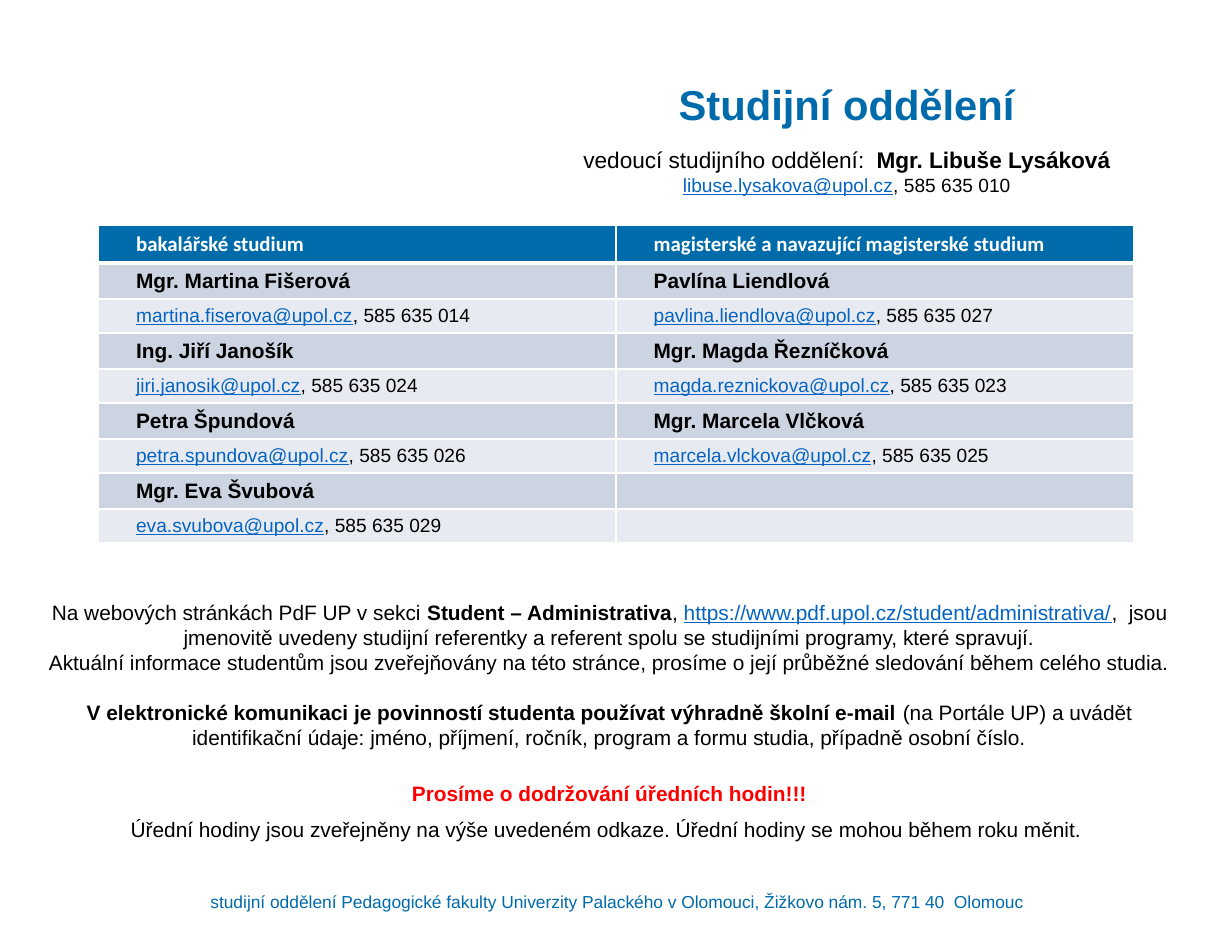
"""Build the study office contact slide."""
from dataclasses import dataclass

import pptx
import pptx.util
import pptx.dml.color
import pptx.enum.text
import pptx.oxml
import pptx.oxml.ns

Pt = pptx.util.Pt
ALIGN = pptx.enum.text.PP_ALIGN
ANCHOR = pptx.enum.text.MSO_ANCHOR
HUES = {
    "blue": "006BAB", "link": "0563C1", "black": "000000", "red": "FF0000",
    "white": "FFFFFF", "dark": "CCD4E2", "light": "E7EBF1",
}


@dataclass
class Run:
    text: str
    size: float = 12
    hue: str = "black"
    bold: bool = False
    line: bool = False
    font: str = "Arial"


@dataclass
class Para:
    runs: list[Run]
    before: float = 0


@dataclass
class Box:
    left: float
    top: float
    width: float
    height: float
    paras: list[Para]
    inset: tuple[float, float] = (0, 0)
    anchor: ANCHOR = ANCHOR.TOP


@dataclass
class Person:
    name: str
    mail: str
    phone: str


def color(hue: str) -> pptx.dml.color.RGBColor:
    return pptx.dml.color.RGBColor.from_string(HUES[hue])


def link(text: str, size: float = 11) -> Run:
    return Run(text, size, "link", line=True)


def contact(mail: str, phone: str) -> list[Run]:
    return [link(mail), Run(f", {phone}", 11)]


def write(para, runs: list[Run]) -> None:
    for item in runs:
        run = para.add_run()
        run.text = item.text
        font = run.font
        font.name, font.size = item.font, Pt(item.size)
        font.bold, font.underline = item.bold, item.line
        font.color.rgb = color(item.hue)


def draw_box(slide, box: Box) -> None:
    shape = slide.shapes.add_textbox(*map(Pt, (box.left, box.top, box.width, box.height)))
    frame = shape.text_frame
    frame.word_wrap = True
    frame.vertical_anchor = box.anchor
    frame.margin_left = frame.margin_right = Pt(box.inset[0])
    frame.margin_top = frame.margin_bottom = Pt(box.inset[1])
    for i, item in enumerate(box.paras):
        para = frame.add_paragraph() if i else frame.paragraphs[0]
        para.alignment = ALIGN.CENTER
        para.space_before = Pt(item.before)
        write(para, item.runs)


def edge(cell, widths: dict[str, float]) -> None:
    props = cell._tc.get_or_add_tcPr()
    for i, (side, width) in enumerate(widths.items()):
        props.insert(i, pptx.oxml.parse_xml(
            f'<a:ln{side} {pptx.oxml.ns.nsdecls("a")} w="{Pt(width)}"><a:solidFill>'
            f'<a:srgbClr val="{HUES["white"]}"/></a:solidFill></a:ln{side}>'))


def draw_cell(cell, runs: list[Run], fill: str, top: float, low: float) -> None:
    cell.fill.solid()
    cell.fill.fore_color.rgb = color(fill)
    cell.margin_bottom = Pt(2.6)
    edge(cell, {"L": 1, "R": 1, "T": top, "B": low})
    para = cell.text_frame.paragraphs[0]
    para._p.get_or_add_pPr().set("marL", str(Pt(14.4)))
    para.font.size = Pt(11)
    write(para, runs)


def draw_staff(slide, heads: list[str], staff: list[list[Person]]) -> None:
    pairs = max(map(len, staff))
    highs = [21.8] + [20.4, 19.7] * pairs
    table = slide.shapes.add_table(
        len(highs), len(heads), Pt(56.7), Pt(129.6), Pt(595.4), Pt(sum(highs))).table
    table.horz_banding = False
    for row, high in zip(table.rows, highs):
        row.height = Pt(high)
    for col, (head, people) in enumerate(zip(heads, staff)):
        table.columns[col].width = Pt(297.7)
        title = Run(head, hue="white", bold=True, font="Calibri")
        draw_cell(table.cell(0, col), [title], "blue", 1, 3)
        for i in range(pairs):
            who = people[i] if i < len(people) else None
            name = [Run(who.name, bold=True)] if who else []
            reach = contact(who.mail, who.phone) if who else []
            draw_cell(table.cell(2 * i + 1, col), name, "dark", 1 if i else 3, 1)
            draw_cell(table.cell(2 * i + 2, col), reach, "light", 1, 1)


HEADS = ["bakalářské studium", "magisterské a navazující magisterské studium"]
STAFF = [
    [
        Person("Mgr. Martina Fišerová", "martina.fiserova@upol.cz", "585 635 014"),
        Person("Ing. Jiří Janošík", "jiri.janosik@upol.cz", "585 635 024"),
        Person("Petra Špundová", "petra.spundova@upol.cz", "585 635 026"),
        Person("Mgr. Eva Švubová", "eva.svubova@upol.cz", "585 635 029"),
    ],
    [
        Person("Pavlína Liendlová", "pavlina.liendlova@upol.cz", "585 635 027"),
        Person("Mgr. Magda Řezníčková", "magda.reznickova@upol.cz", "585 635 023"),
        Person("Mgr. Marcela Vlčková", "marcela.vlckova@upol.cz", "585 635 025"),
    ],
]
TITLE = Box(321.8, 45.4, 330.5, 84.2, [
    Para([Run("Studijní oddělení", 24, "blue", True)]),
    Para([Run("vedoucí studijního oddělení:  ", 13),
          Run("Mgr. Libuše Lysáková", 13, bold=True)], 9.7),
    Para(contact("libuse.lysakova@upol.cz", "585 635 010")),
])
FOOT = Box(74.2, 507.3, 560.9, 17.3, [
    Para([Run("studijní oddělení Pedagogické fakulty Univerzity Palackého v Olomouci, "
              "Žižkovo nám. 5, 771 40  Olomouc", 10, "blue")]),
], anchor=ANCHOR.BOTTOM)
NOTES = Box(13.7, 341.3, 673.9, 147.6, [
    Para([Run("Na webových stránkách PdF UP v sekci "),
          Run("Student – Administrativa", bold=True), Run(", "),
          link("https://www.pdf.upol.cz/student/administrativa/", 12),
          Run(",  jsou jmenovitě uvedeny studijní referentky a referent spolu "
              "se studijními programy, které spravují.")]),
    Para([Run("Aktuální informace studentům jsou zveřejňovány na této stránce, "
              "prosíme o její průběžné sledování během celého studia.")]),
    Para([Run("V elektronické komunikaci je povinností studenta používat výhradně "
              "školní e-mail ", bold=True),
          Run("(na Portále UP) a uvádět identifikační údaje: jméno, příjmení, ročník, "
              "program a formu studia, případně osobní číslo.")], 14.4),
    Para([Run("Prosíme o dodržování úředních hodin!!!", hue="red", bold=True)], 18),
    Para([Run("Úřední hodiny jsou zveřejněny na výše uvedeném odkaze. "
              "Úřední hodiny se mohou během roku měnit. ")], 6),
], inset=(7.2, 3.6))


def main() -> None:
    deck = pptx.Presentation()
    deck.slide_width, deck.slide_height = Pt(708.66), Pt(538.58)
    slide = deck.slides.add_slide(deck.slide_layouts[6])
    draw_box(slide, TITLE)
    draw_staff(slide, HEADS, STAFF)
    for box in (FOOT, NOTES):
        draw_box(slide, box)
    deck.save("out.pptx")


if __name__ == "__main__":
    main()
